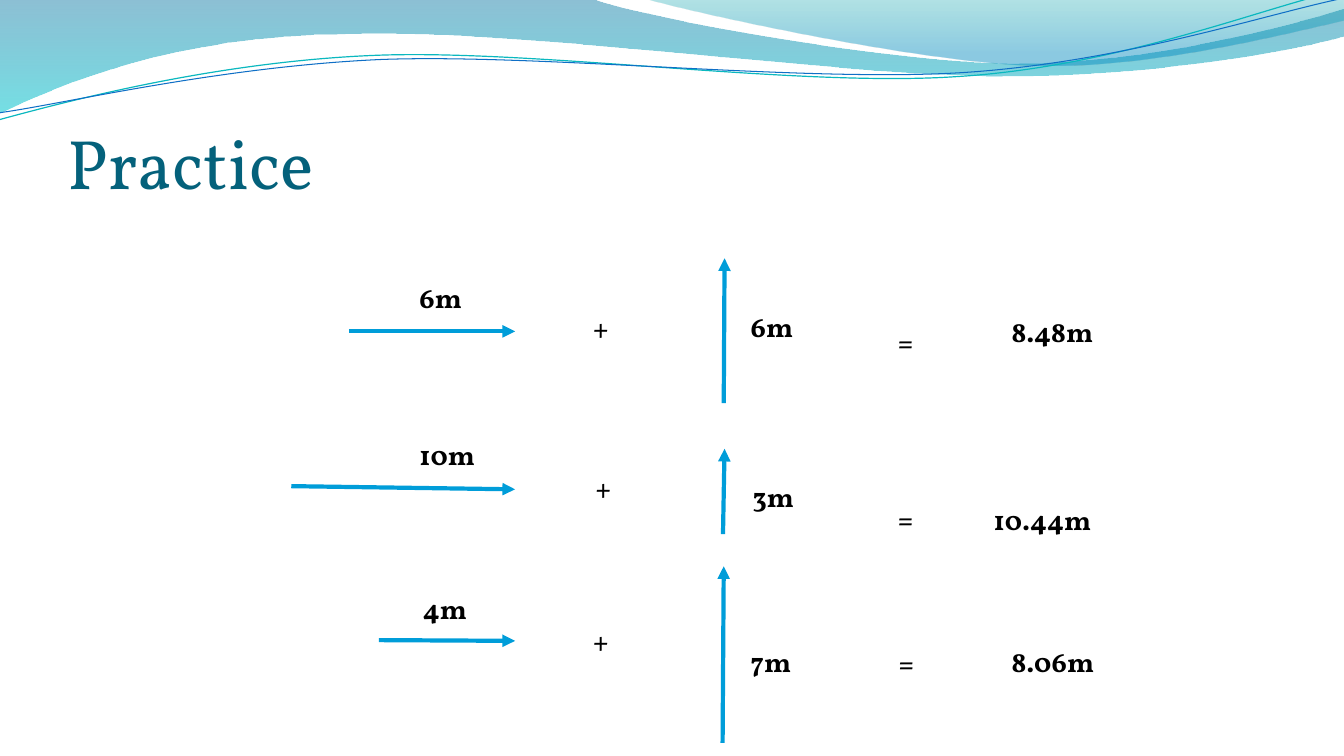
import dataclasses

import lxml.etree
import pptx
import pptx.dml.color
import pptx.enum.shapes
import pptx.enum.text
import pptx.oxml.ns
import pptx.util

Cm = pptx.util.Cm
qn = pptx.oxml.ns.qn


@dataclasses.dataclass(frozen=True)
class Theme:
    font: str = "Vollkorn"
    title_size: int = 50
    label_size: int = 20
    title: str = "04617B"
    label: str = "000000"
    arrow: str = "009DD9"
    arrow_width: float = 3
    wide_wave: tuple = ((0, "0074A1", 45), (1, "00C6CF", 55))
    right_wave: tuple = ((0, "00A1A9", 30), (0.8, "008BBF", 45))
    teal_line: str = "0AB8BF"
    blue_line: str = "0F6FC6"


THEME = Theme()

WIDE_WAVE = [
    (0, 0), (14.91, -0.03),
    (16.1, 0.43, 22.48, 1.6, 25.68, 1.6),
    (28.91, 1.6, 32.46, 0.66, 33.86, 0.23),
    (33.91, 0.91),
    (33.3, 1.12, 29.46, 1.93, 25.25, 1.92),
    (21.06, 1.92, 12.93, 0.71, 8.71, 0.87),
    (4.37, 0.91, 1.55, 2.11, -0.03, 2.87),
]
RIGHT_WAVE = [
    (16.23, -0.03),
    (17.25, 0.28, 23.09, 1.57, 26.04, 1.65),
    (28.98, 1.75, 32.56, 0.81, 33.86, 0.53),
    (33.86, 0),
]
TEAL_CURVE = [
    (-0.03, 3.02),
    (1.63, 2.57, 5.36, 1.57, 9.37, 1.4),
    (13.39, 1.22, 20.07, 2.21, 24.13, 1.93),
    (28.19, 1.68, 31.8, 0.2, 33.81, -0.25),
]
BLUE_CURVE = [
    (0, 2.84),
    (1.6, 2.62, 5.54, 1.68, 9.6, 1.5),
    (13.64, 1.35, 20.22, 2.08, 24.26, 1.83),
    (28.32, 1.57, 31.88, 0.36, 33.88, -0.05),
]

ARROWS = [
    (8.79, 8.35, 12.98, 8.35),
    (7.34, 12.25, 12.98, 12.33),
    (9.55, 16.13, 12.98, 16.15),
    (18.24, 10.16, 18.26, 6.51),
    (18.22, 13.46, 18.26, 11.31),
    (18.21, 18.72, 18.24, 14.27),
]
LABELS = [
    ("6m", 10.32, 6.94), ("+", 14.7, 7.7), ("6m", 18.67, 7.67),
    ("=", 22.38, 8.05), ("8.48m", 25.24, 7.8),
    ("10m", 10.32, 10.9), ("+", 14.76, 11.73), ("3m", 18.72, 11.96),
    ("=", 22.38, 12.5), ("10.44m", 24.79, 12.53),
    ("4m", 10.41, 14.77), ("+", 14.7, 15.59), ("7m", 18.67, 16.12),
    ("=", 22.4, 16.15), ("8.06m", 25.24, 16.11),
]


def rgb(code):
    return pptx.dml.color.RGBColor.from_string(code)


def bend_lines(shape, segments):
    lines = list(shape._element.spPr.iter(qn("a:lnTo")))
    for line, segment in zip(lines, segments):
        if len(segment) == 2:
            continue
        curve = lxml.etree.Element(qn("a:cubicBezTo"))
        for x, y in zip(segment[::2], segment[1::2]):
            lxml.etree.SubElement(
                curve, qn("a:pt"), x=str(Cm(x) - shape.left), y=str(Cm(y) - shape.top)
            )
        line.getparent().replace(line, curve)


def add_outline(slide, segments, closed):
    anchors = [(Cm(segment[-2]), Cm(segment[-1])) for segment in segments]
    builder = slide.shapes.build_freeform(*anchors[0])
    builder.add_line_segments(anchors[1:], close=closed)
    shape = builder.convert_to_shape()
    bend_lines(shape, segments[1:])
    shape.shadow.inherit = False
    return shape


def add_wave(slide, segments, stops):
    shape = add_outline(slide, segments, True)
    shape.line.fill.background()
    shape.fill.gradient()
    shape.fill.gradient_angle = 270
    for stop, (position, color, _) in zip(shape.fill.gradient_stops, stops):
        stop.position = position
        stop.color.rgb = rgb(color)
    colors = shape._element.spPr.iter(qn("a:srgbClr"))
    for element, (_, _, opacity) in zip(list(colors), stops):
        lxml.etree.SubElement(element, qn("a:alpha"), val=str(opacity * 1000))


def add_curve(slide, segments, color, width):
    shape = add_outline(slide, segments, False)
    shape.fill.background()
    shape.line.color.rgb = rgb(color)
    shape.line.width = pptx.util.Pt(width)


def add_arrow(slide, ends):
    connector = slide.shapes.add_connector(
        pptx.enum.shapes.MSO_CONNECTOR.STRAIGHT, *map(Cm, ends)
    )
    connector.line.color.rgb = rgb(THEME.arrow)
    connector.line.width = pptx.util.Pt(THEME.arrow_width)
    properties = connector._element.spPr
    lxml.etree.SubElement(properties.find(qn("a:ln")), qn("a:tailEnd"), type="triangle")
    lxml.etree.SubElement(properties, qn("a:effectLst"))


def add_text(slide, text, box, size, color, bold):
    shape = slide.shapes.add_textbox(*map(Cm, box))
    frame = shape.text_frame
    frame.word_wrap = True
    frame.text = text
    font = frame.paragraphs[0].runs[0].font
    font.name = THEME.font
    font.size = pptx.util.Pt(size)
    font.bold = bold
    font.color.rgb = rgb(color)
    return frame


def add_title(slide, text):
    frame = add_text(
        slide, text, (1.7, 1.96, 30.48, 3.18), THEME.title_size, THEME.title, False
    )
    frame.margin_left = frame.margin_right = frame.margin_bottom = 0
    frame.vertical_anchor = pptx.enum.text.MSO_ANCHOR.BOTTOM


def add_label(slide, text, left, top):
    width = {5: 2.82, 6: 3.28}.get(len(text), 2.41)
    add_text(
        slide, text, (left, top, width, 1.12), THEME.label_size, THEME.label, True
    )


def main():
    presentation = pptx.Presentation()
    presentation.slide_width = Cm(33.87)
    presentation.slide_height = Cm(19.05)
    slide = presentation.slides.add_slide(presentation.slide_layouts[6])
    add_wave(slide, WIDE_WAVE, THEME.wide_wave)
    add_wave(slide, RIGHT_WAVE, THEME.right_wave)
    add_curve(slide, TEAL_CURVE, THEME.teal_line, 0.85)
    add_curve(slide, BLUE_CURVE, THEME.blue_line, 0.75)
    add_title(slide, "Practice")
    for ends in ARROWS:
        add_arrow(slide, ends)
    for text, left, top in LABELS:
        add_label(slide, text, left, top)
    presentation.save("out.pptx")


if __name__ == "__main__":
    main()
